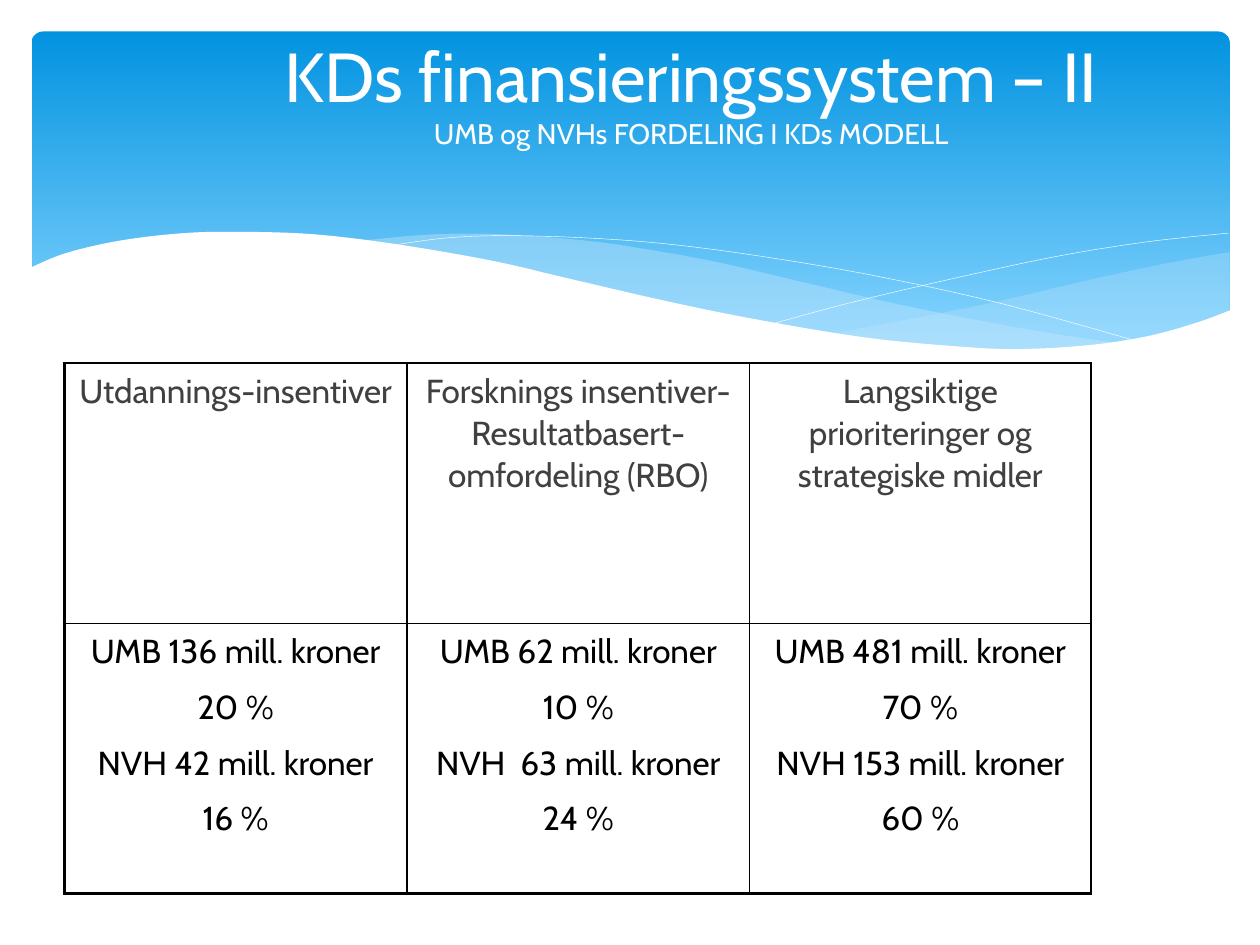
from dataclasses import dataclass

from lxml import etree
from pptx import Presentation
from pptx.dml.color import RGBColor
from pptx.enum.shapes import MSO_SHAPE
from pptx.enum.text import MSO_ANCHOR, MSO_AUTO_SIZE, PP_ALIGN
from pptx.oxml.ns import qn
from pptx.util import Inches, Pt

ROUNDED = MSO_SHAPE.ROUNDED_RECTANGLE
MIDDLE = MSO_ANCHOR.MIDDLE
CENTER = PP_ALIGN.CENTER
NO_FIT = MSO_AUTO_SIZE.NONE

COLUMNS, ROWS = 100, 75
WIDTH, HEIGHT = Inches(10), Inches(7.5)


@dataclass(frozen=True)
class Theme:
    """Colours, font and type sizes of the slide."""
    font: str = "Cabin"
    sky: str = "0293E0"
    pale_sky: str = "83D3FE"
    mist: str = "C6E7FC"
    white: str = "FFFFFF"
    heading: str = "404040"
    ink: str = "000000"
    title_size: float = 39.6
    subtitle_size: float = 16.2
    table_size: float = 19
    thin: float = 1
    thick: float = 2.25
    hairline: float = 0.25


def smooth(anchors, steps=8):
    """Return points on a smooth curve through the anchors."""
    padded = [anchors[0], *anchors, anchors[-1]]
    points = [anchors[0]]
    for a, b, c, d in zip(padded, padded[1:], padded[2:], padded[3:]):
        for step in range(1, steps + 1):
            t = step / steps
            points.append(tuple(
                (2 * q + (r - p) * t + (2 * p - 5 * q + 4 * r - s) * t ** 2
                 + (3 * q - p - 3 * r + s) * t ** 3) / 2
                for p, q, r, s in zip(a, b, c, d)))
    return points


class Painter:
    """Holds the theme and the current slide, and draws on its grid."""

    def __init__(self, page, theme):
        """Keep the slide and its theme."""
        self.page, self.theme = page, theme

    def place(self, column, row):
        """Turn a grid position into slide lengths."""
        return round(WIDTH * column / COLUMNS), round(HEIGHT * row / ROWS)

    def colour(self, name):
        """Look up a theme colour."""
        return RGBColor.from_string(getattr(self.theme, name))

    def banner(self, left, top, width, height):
        """Draw the rounded gradient header."""
        box = self.page.shapes.add_shape(
            ROUNDED, *self.place(left, top), *self.place(width, height))
        box.adjustments[0] = 0.034
        box.shadow.inherit = False
        box.line.fill.background()
        box.fill.gradient()
        box.fill.gradient_angle = 270
        stops = zip(box.fill.gradient_stops, (0, 0.9), ("sky", "pale_sky"))
        for stop, position, name in stops:
            stop.position = position
            stop.color.rgb = self.colour(name)

    def outline(self, points, closed):
        """Build a freeform without a shadow."""
        start, *others = [self.place(*point) for point in points]
        builder = self.page.shapes.build_freeform(*start)
        builder.add_line_segments(others, close=closed)
        shape = builder.convert_to_shape()
        shape.shadow.inherit = False
        return shape

    def wave(self, *edges, fill, opacity=100):
        """Draw a filled area bounded by smooth edges."""
        points = [point for edge in edges for point in smooth(edge)]
        shape = self.outline(points, True)
        shape.line.fill.background()
        shape.fill.solid()
        shape.fill.fore_color.rgb = self.colour(fill)
        if opacity < 100:
            tone = shape.fill._xPr.find(".//" + qn("a:srgbClr"))
            etree.SubElement(tone, qn("a:alpha"), val=str(opacity * 1000))

    def strand(self, anchors):
        """Draw a thin white curve."""
        shape = self.outline(smooth(anchors), False)
        shape.fill.background()
        shape.line.color.rgb = self.colour("white")
        shape.line.width = Pt(self.theme.hairline)

    def title(self, left, top, width, height, heading, subtitle):
        """Fill the title placeholder and bring it to the front."""
        box = self.page.shapes.title
        box.left, box.top = self.place(left, top)
        box.width, box.height = self.place(width, height)
        frame = box.text_frame
        frame.auto_size, frame.vertical_anchor = NO_FIT, MIDDLE
        para = frame.paragraphs[0]
        para.alignment = CENTER
        para.font.name = self.theme.font
        para.font.color.rgb = self.colour("white")
        span = para.add_run()
        span.text, span.font.size = heading, Pt(self.theme.title_size)
        para.add_line_break()
        span = para.add_run()
        span.text, span.font.size = subtitle, Pt(self.theme.subtitle_size)
        self.page.shapes.element.append(box.element)

    def border(self, cell, side, weight):
        """Rule one side of a table cell."""
        line = etree.SubElement(cell._tc.get_or_add_tcPr(),
                                qn(f"a:ln{side}"), w=str(Pt(weight)))
        fill = etree.SubElement(line, qn("a:solidFill"))
        etree.SubElement(fill, qn("a:srgbClr"), val=self.theme.ink)

    def table(self, left, top, widths, heights, rows, tones):
        """Draw a ruled table with centred text."""
        table = self.page.shapes.add_table(
            len(rows), len(widths), *self.place(left, top),
            *self.place(sum(widths), sum(heights))).table
        table.first_row = table.horz_banding = False
        for column, width in zip(table.columns, widths):
            column.width = self.place(width, 0)[0]
        for y, (texts, height, tone) in enumerate(zip(rows, heights, tones)):
            table.rows[y].height = self.place(0, height)[1]
            for x, text in enumerate(texts):
                cell = table.cell(y, x)
                outer = {"L": x == 0, "B": y == len(rows) - 1}
                for side in "LRTB":
                    self.border(cell, side, self.theme.thick
                                if outer.get(side) else self.theme.thin)
                cell.fill.background()
                cell.text = text
                for para in cell.text_frame.paragraphs:
                    para.alignment, para.line_spacing = CENTER, 1.05
                    gap = Pt(self.theme.table_size * 0.2)
                    para.space_before = para.space_after = gap
                    para.font.name = self.theme.font
                    para.font.size = Pt(self.theme.table_size)
                    para.font.color.rgb = self.colour(tone)


def main():
    """Build and save the slide."""
    deck = Presentation()
    deck.slide_width, deck.slide_height = WIDTH, HEIGHT
    page = deck.slides.add_slide(deck.slide_layouts[5])
    painter = Painter(page, Theme())

    painter.banner(2.5, 2.5, 95.1, 27)
    painter.wave(
        [(97.6, 20), (92.1, 21), (86.1, 22.3), (77.9, 24.2), (66.1, 26.5)],
        [(66.1, 26.5), (71.9, 27.2), (76.9, 27.7), (81.4, 27.8), (86.3, 27.5),
         (90.5, 26.9), (94.2, 25.9), (97.6, 24.7)],
        fill="mist", opacity=29)
    painter.wave(
        [(89.3, 27.3), (83.7, 26.5), (77.5, 25.4), (70.6, 24), (62.9, 22.2),
         (56.9, 20.8), (51.4, 19.8), (46.5, 19.1), (39.9, 18.6), (34.4, 18.6),
         (28.6, 19.1)],
        [(28.6, 19.1), (36.2, 20.3), (44.9, 22.2), (53, 24), (60.1, 25.5),
         (66.5, 26.6), (72.2, 27.4), (77.3, 27.7), (81.8, 27.8), (89.3, 27.3)],
        fill="mist", opacity=40)
    painter.strand([(30.9, 19.5), (35.3, 18.9), (40.1, 18.7), (46.9, 18.9),
                    (53.3, 19.4), (60.8, 20.4), (69.5, 21.9), (79.5, 24.1),
                    (90.7, 27.2)])
    painter.strand([(61.3, 25.7), (67.2, 24.1), (74.8, 22.3), (83.6, 20.4),
                    (91, 19.2), (97.5, 18.5)])
    painter.wave(
        [(2.3, 21.3), (5.2, 20.1), (9.5, 19.1), (14.6, 18.5), (19.3, 18.4),
         (25, 18.6), (31.6, 19.4), (39.1, 20.7), (44.7, 22), (52.9, 23.9),
         (60.3, 25.4), (68.8, 26.8), (76.1, 27.5), (80.9, 27.7), (86.3, 27.4),
         (91, 26.7), (95, 25.6), (97.7, 24.6)],
        [(97.7, 32.9), (2.3, 32.9)], fill="white")
    painter.title(16, 2.1, 77.7, 10.3, "KDs finansieringssystem – II",
                  "UMB og NVHs FORDELING I KDs MODELL")
    painter.table(
        5.1, 28.8, (27.2, 27.2, 27.1), (20.7, 21.4),
        [("Utdannings-insentiver",
          "Forsknings insentiver- Resultatbasert-omfordeling (RBO)",
          "Langsiktige prioriteringer og strategiske midler"),
         ("UMB 136 mill. kroner\n20 %\nNVH 42 mill. kroner\n16 %",
          "UMB 62 mill. kroner\n10 %\nNVH  63 mill. kroner\n24 %",
          "UMB 481 mill. kroner\n70 %\nNVH 153 mill. kroner\n60 %")],
        ("heading", "ink"))
    deck.save("out.pptx")


if __name__ == "__main__":
    main()
